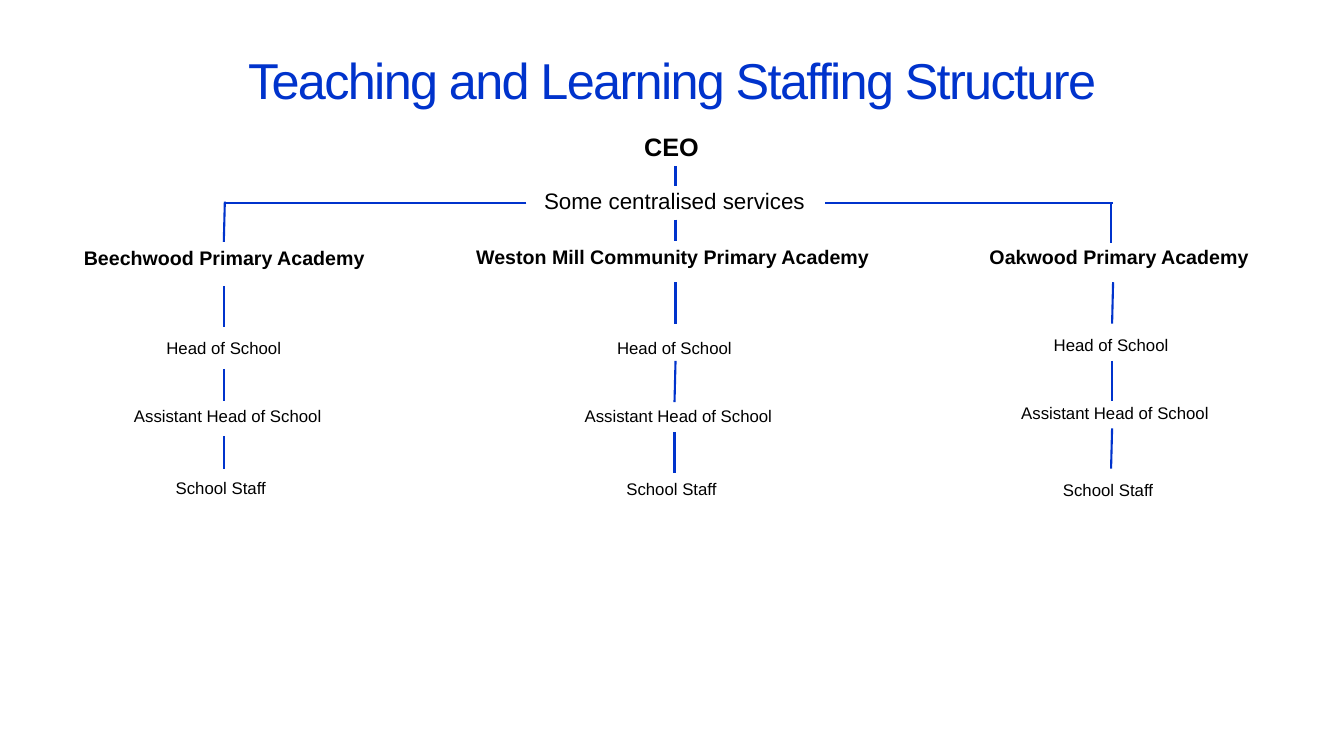
from dataclasses import dataclass

from lxml.etree import SubElement
from pptx import Presentation
from pptx.dml.color import RGBColor
from pptx.enum.shapes import MSO_CONNECTOR
from pptx.enum.text import MSO_ANCHOR, PP_ALIGN
from pptx.oxml.ns import qn
from pptx.slide import Slide
from pptx.text.text import _Run as Run
from pptx.util import Inches, Pt


@dataclass(frozen=True)
class Theme:
    font: str = "Arial"
    blue: RGBColor = RGBColor(0x00, 0x33, 0xCC)
    black: RGBColor = RGBColor(0x00, 0x00, 0x00)
    title: float = 36
    ceo: float = 18
    services: float = 16
    school: float = 14
    role: float = 12
    line: float = 1.5


@dataclass(frozen=True)
class Box:
    left: float
    top: float
    width: float
    height: float


@dataclass(frozen=True)
class Line:
    x1: float
    y1: float
    x2: float
    y2: float


@dataclass(frozen=True)
class Role:
    name: str
    offset: float  # label centre relative to the school's axis
    width: float


@dataclass(frozen=True)
class School:
    name: str
    name_box: Box
    axis: float
    role_tops: tuple[float, ...]
    links: tuple[Line, ...]


THEME = Theme()
ROLE_HEIGHT = 0.3

ROLES = (
    Role("Head of School", 0, 1.79),
    Role("Assistant Head of School", 0.04, 2.26),
    Role("School Staff", -0.03, 1.85),
)

SCHOOLS = (
    School("Beechwood Primary Academy", Box(0.43, 2.39, 3.59, 0.34), 2.22,
           (3.3, 3.98, 4.69),
           (Line(2.22, 2.84, 2.22, 3.24), Line(2.22, 3.66, 2.22, 3.98),
            Line(2.22, 4.33, 2.22, 4.65))),
    School("Weston Mill Community Primary Academy ", Box(4.55, 2.38, 4.3, 0.34), 6.69,
           (3.3, 3.98, 4.7),
           (Line(6.7, 2.8, 6.7, 3.21), Line(6.7, 3.58, 6.69, 3.99),
            Line(6.69, 4.29, 6.69, 4.69))),
    School("Oakwood Primary Academy", Box(9.33, 2.38, 3.54, 0.34), 11.02,
           (3.27, 3.95, 4.71),
           (Line(11.04, 2.8, 11.03, 3.21), Line(11.03, 3.58, 11.03, 3.98),
            Line(11.03, 4.25, 11.02, 4.65))),
)

TOP_LINKS = (
    Line(6.7, 1.65, 6.7, 1.85),
    Line(6.7, 2.18, 6.7, 2.39),
    Line(5.22, 2.01, 2.22, 2.01),
    Line(11.04, 2.01, 8.18, 2.01),
    Line(11.02, 2.01, 11.02, 2.41),
    Line(2.23, 2.0, 2.22, 2.4),
)


def add_label(slide: Slide, text: str, box: Box, size: float, bold: bool = False,
              color: RGBColor = THEME.black, align: PP_ALIGN = PP_ALIGN.CENTER) -> Run:
    """Add a one-line text box and return its run for further formatting."""
    sp = slide.shapes.add_textbox(Inches(box.left), Inches(box.top),
                                  Inches(box.width), Inches(box.height))
    tf = sp.text_frame
    tf.word_wrap = True
    p = tf.paragraphs[0]
    p.text = text
    p.alignment = align
    r = p.runs[0]
    r.font.name = THEME.font
    r.font.size = Pt(size)
    r.font.bold = bold
    r.font.color.rgb = color
    return r


def add_title(slide: Slide) -> None:
    r = add_label(slide, "Teaching and Learning Staffing Structure ",
                  Box(1, 0.53, 11.45, 0.61), THEME.title, color=THEME.blue)
    r._r.get_or_add_rPr().set("spc", "-120")
    tf = slide.shapes[-1].text_frame
    tf.vertical_anchor = MSO_ANCHOR.MIDDLE
    tf.paragraphs[0].line_spacing = 0.85


def add_link(slide: Slide, line: Line) -> None:
    cxn = slide.shapes.add_connector(MSO_CONNECTOR.STRAIGHT,
                                     Inches(line.x1), Inches(line.y1),
                                     Inches(line.x2), Inches(line.y2))
    cxn.line.color.rgb = THEME.blue
    cxn.line.width = Pt(THEME.line)
    SubElement(cxn._element.spPr, qn("a:effectLst"))


def add_school(slide: Slide, school: School) -> None:
    add_label(slide, school.name, school.name_box, THEME.school, bold=True)
    for role, top in zip(ROLES, school.role_tops):
        left = school.axis + role.offset - role.width / 2
        add_label(slide, role.name, Box(left, top, role.width, ROLE_HEIGHT), THEME.role)
    for link in school.links:
        add_link(slide, link)


def main() -> None:
    prs = Presentation()
    prs.slide_width, prs.slide_height = Inches(13.33), Inches(7.5)
    slide = prs.slides.add_slide(prs.slide_layouts[6])

    add_title(slide)
    add_label(slide, "CEO", Box(6.29, 1.25, 0.78, 0.4), THEME.ceo, bold=True,
              align=PP_ALIGN.LEFT)
    add_label(slide, "Some centralised services ", Box(5.27, 1.81, 2.84, 0.37),
              THEME.services)
    for link in TOP_LINKS:
        add_link(slide, link)
    for school in SCHOOLS:
        add_school(slide, school)

    prs.save("out.pptx")


if __name__ == "__main__":
    main()
